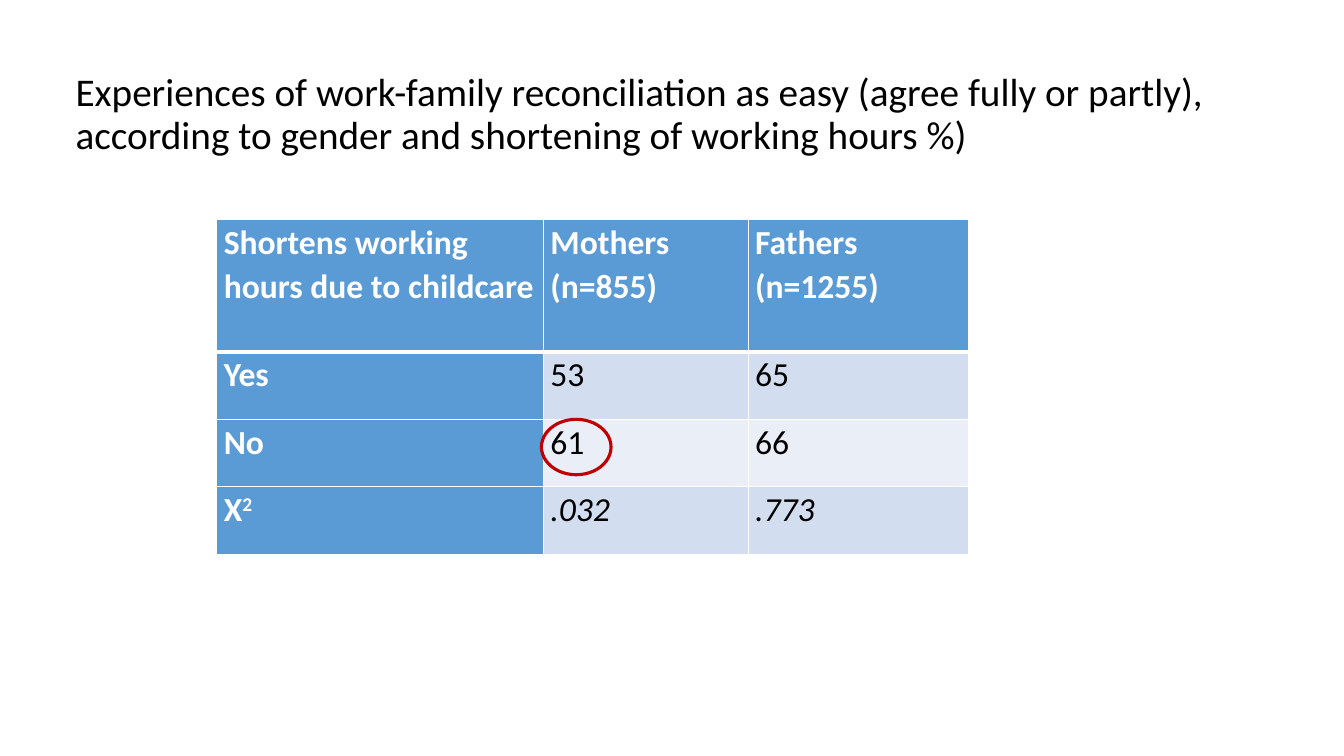
from dataclasses import dataclass

from lxml import etree
from pptx import Presentation
from pptx import util as u
from pptx.dml.color import RGBColor
from pptx.enum import shapes, text
from pptx.oxml import ns


@dataclass(frozen=True)
class Theme:
    font: str = "Calibri"
    title_size: int = 28
    table_size: int = 24
    black: str = "000000"
    white: str = "FFFFFF"
    header: str = "5B9BD5"
    bands: tuple[str, str] = ("D2DEEF", "EAEFF7")
    accent: str = "C00000"
    thin: float = 1
    thick: float = 3


@dataclass(frozen=True)
class Box:
    left: float
    top: float
    width: float
    height: float

    def place(self) -> tuple:
        return tuple(u.Inches(n) for n in (self.left, self.top, self.width, self.height))


@dataclass(frozen=True)
class Row:
    label: str
    values: tuple[str, str]
    height: float = 0.67
    superscript: str = ""
    italic: bool = False


THEME = Theme()
TITLE = ("Experiences of work-family reconciliation as easy (agree fully or partly), "
         "according to gender and shortening of working hours %)")
TITLE_BOX = Box(0.65, 0.42, 11.51, 1.45)
TABLE_BOX = Box(2.15, 2.18, 7.46, 3.32)
HIGHLIGHT_BOX = Box(5.37, 4.16, 0.69, 0.55)
COLUMN_WIDTHS = (3.24, 2.03, 2.19)
ROWS = (
    Row("Shortens working hours due to childcare",
        ("Mothers (n=855)", "Fathers (n=1255)"), height=1.31),
    Row("Yes", ("53", "65")),
    Row("No", ("61", "66")),
    Row("X", (".032", ".773"), superscript="2", italic=True),
)


def apply(target, **values) -> None:
    for name, value in values.items():
        setattr(target, name, value)


def add_run(p, words: str, size: int, color: str, **style):
    r = p.add_run()
    r.text = words
    apply(r.font, name=THEME.font, size=u.Pt(size), **style)
    r.font.color.rgb = RGBColor.from_string(color)
    return r


def set_borders(cell, **widths: float) -> None:
    """Put white edge lines ahead of the cell's fill, as the schema requires."""
    tc_pr = cell._tc.get_or_add_tcPr()
    for i, (edge, width) in enumerate(widths.items()):
        line = etree.Element(ns.qn(f"a:{edge}"), w=str(u.Pt(width)))
        fill = etree.SubElement(line, ns.qn("a:solidFill"))
        etree.SubElement(fill, ns.qn("a:srgbClr"), val=THEME.white)
        tc_pr.insert(i, line)


def fill_cell(cell, words: str, row: Row, row_no: int, col_no: int) -> None:
    heading = row_no == 0 or col_no == 0
    fill = THEME.header if heading else THEME.bands[(row_no - 1) % 2]
    cell.fill.solid()
    cell.fill.fore_color.rgb = RGBColor.from_string(fill)
    apply(cell, margin_left=u.Inches(0.07), margin_right=u.Inches(0.07),
          margin_top=0, margin_bottom=0)
    set_borders(cell, lnL=THEME.thin, lnR=THEME.thin,
                lnT=THEME.thick if row_no == 1 else THEME.thin,
                lnB=THEME.thick if row_no == 0 else THEME.thin)

    p = cell.text_frame.paragraphs[0]
    apply(p, line_spacing=1.07, space_after=u.Pt(8))
    color = THEME.white if heading else THEME.black
    style = dict(bold=heading, italic=row.italic and not heading)
    add_run(p, words, THEME.table_size, color, **style)
    if col_no == 0 and row.superscript:
        r = add_run(p, row.superscript, THEME.table_size, color, **style)
        r.font._element.set("baseline", "30000")


def add_title(slide) -> None:
    sp = slide.shapes.title
    sp.left, sp.top, sp.width, sp.height = TITLE_BOX.place()
    tf = sp.text_frame
    apply(tf, word_wrap=True, auto_size=text.MSO_AUTO_SIZE.NONE,
          vertical_anchor=text.MSO_ANCHOR.MIDDLE)
    p = tf.paragraphs[0]
    apply(p, alignment=text.PP_ALIGN.LEFT, line_spacing=0.9)
    add_run(p, TITLE, THEME.title_size, THEME.black)


def add_results_table(slide) -> None:
    table = slide.shapes.add_table(len(ROWS), len(COLUMN_WIDTHS), *TABLE_BOX.place()).table
    table.first_col = True
    for column, width in zip(table.columns, COLUMN_WIDTHS):
        column.width = u.Inches(width)
    for row_no, row in enumerate(ROWS):
        table.rows[row_no].height = u.Inches(row.height)
        for col_no, words in enumerate((row.label, *row.values)):
            fill_cell(table.cell(row_no, col_no), words, row, row_no, col_no)


def add_highlight(slide) -> None:
    sp = slide.shapes.add_shape(shapes.MSO_SHAPE.OVAL, *HIGHLIGHT_BOX.place())
    sp.shadow.inherit = False
    sp.fill.background()
    sp.line.color.rgb = RGBColor.from_string(THEME.accent)
    sp.line.width = u.Pt(2.25)


def main() -> None:
    prs = Presentation()
    apply(prs, slide_width=u.Inches(13.33), slide_height=u.Inches(7.5))
    slide = prs.slides.add_slide(prs.slide_layouts.get_by_name("Title Only"))

    # Heading, results, and the ring around the mothers' "No" share
    add_title(slide)
    add_results_table(slide)
    add_highlight(slide)
    prs.save("out.pptx")


if __name__ == "__main__":
    main()
